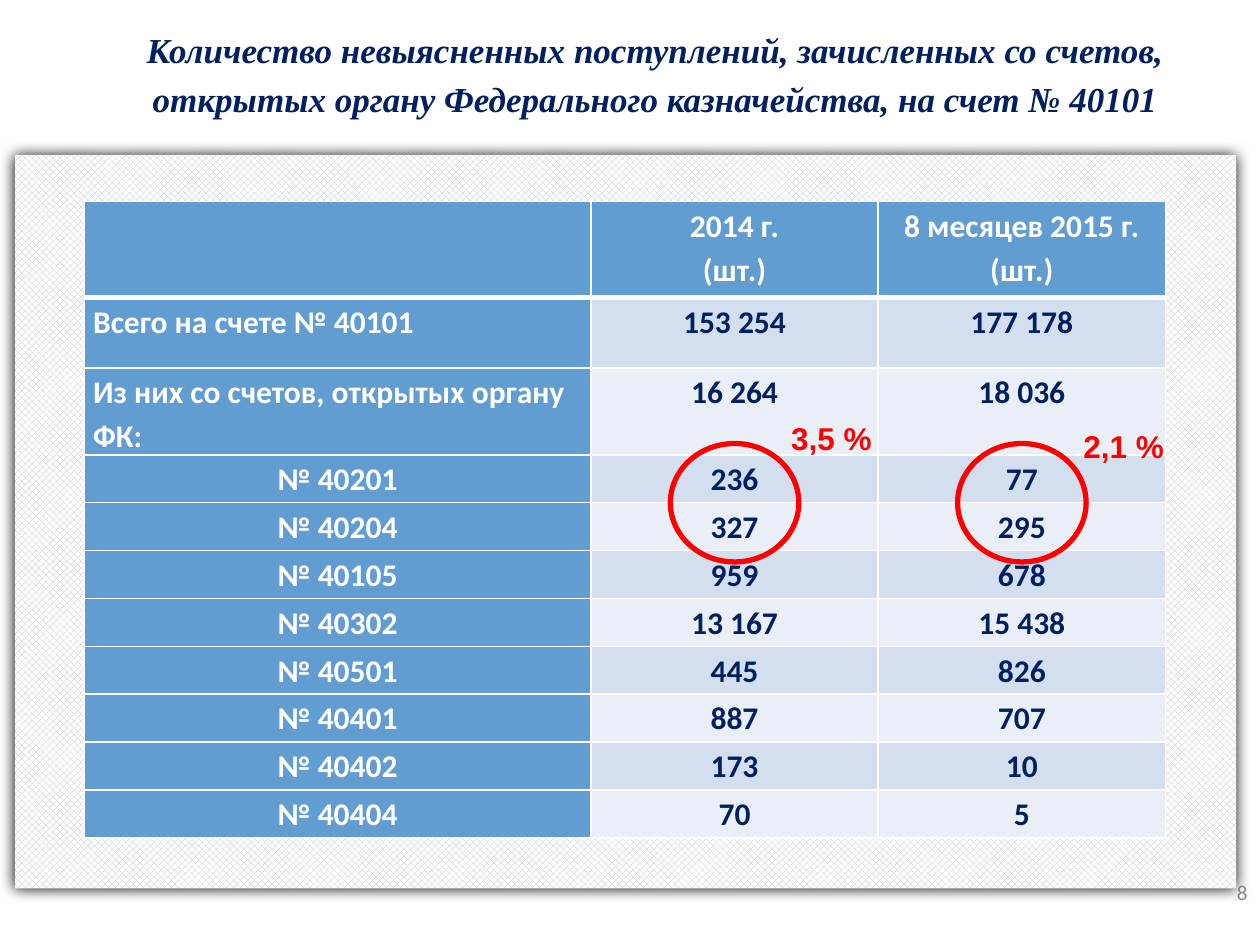
from dataclasses import dataclass
from itertools import accumulate

from lxml import etree
from pptx import Presentation
from pptx.dml.color import RGBColor
from pptx.enum.dml import MSO_PATTERN
from pptx.enum.shapes import MSO_SHAPE
from pptx.enum.text import MSO_ANCHOR, PP_ALIGN
from pptx.oxml.ns import qn
from pptx.util import Inches, Pt

LEFT, CENTER, RIGHT = PP_ALIGN.LEFT, PP_ALIGN.CENTER, PP_ALIGN.RIGHT
TOP, MIDDLE = MSO_ANCHOR.TOP, MSO_ANCHOR.MIDDLE
RECTANGLE, OVAL = MSO_SHAPE.RECTANGLE, MSO_SHAPE.OVAL
DIAMONDS = MSO_PATTERN.OUTLINED_DIAMOND


@dataclass(frozen=True)
class Theme:
    white: str = "FFFFFF"
    navy: str = "002060"
    blue: str = "629DD1"
    bands: tuple = ("D3DFEE", "EAEFF7")
    red: str = "FF0000"
    gray: str = "898989"
    pattern: str = "BFBFBF"
    shadow: str = "000000"
    title_font: str = "Times New Roman"
    table_font: str = "Calibri"
    mark_font: str = "Arial"
    title_size: int = 20
    body_size: int = 18
    number_size: int = 12
    line_spacing: float = 1.15


THEME = Theme()
TABLE_LEFT, TABLE_TOP = 0.67, 1.6
COLUMNS = [4.02, 2.28, 2.28]
ROWS = [0.76, 0.56, 0.69] + [0.38] * 8
COLUMN_EDGES = list(accumulate(COLUMNS, initial=TABLE_LEFT))
ROW_EDGES = list(accumulate(ROWS, initial=TABLE_TOP))

TITLE = ("Количество невыясненных поступлений, зачисленных со счетов, "
         "открытых органу Федерального казначейства, на счет № 40101")
RECEIPTS = [
    ("", "2014 г.\n(шт.)", "8 месяцев 2015 г.\n(шт.)"),
    ("Всего на счете № 40101", "153 254", "177 178"),
    ("Из них со счетов, открытых органу ФК:", "16 264", "18 036"),
    ("№ 40201", "236", "77"),
    ("№ 40204", "327", "295"),
    ("№ 40105", "959", "678"),
    ("№ 40302", "13 167", "15 438"),
    ("№ 40501", "445", "826"),
    ("№ 40401", "887", "707"),
    ("№ 40402", "173", "10"),
    ("№ 40404", "70", "5"),
]
FIRST_ACCOUNT_ROW = 3
# column, share, offset of the share from the column centre, top of the share
SHARES = [(1, "3,5 %", 0.35, 3.28), (2, "2,1 %", 0.39, 3.34)]


def rgb(value):
    return RGBColor.from_string(value)


def style_paragraph(paragraph, font_name, size, color, align, bold=False, italic=False):
    paragraph.alignment = align
    font = paragraph.font
    font.name, font.size, font.bold, font.italic = font_name, Pt(size), bold, italic
    font.color.rgb = rgb(color)


def add_text(slide, box, text, font_name, size, color, align=LEFT, anchor=TOP,
             bold=False, italic=False, spacing=1.0):
    frame = slide.shapes.add_textbox(*map(Inches, box)).text_frame
    frame.word_wrap = True
    frame.vertical_anchor = anchor
    frame.text = text
    paragraph = frame.paragraphs[0]
    paragraph.line_spacing = spacing
    style_paragraph(paragraph, font_name, size, color, align, bold, italic)


def add_panel(slide):
    """Patterned backdrop with a soft shadow just below it."""
    panel = slide.shapes.add_shape(RECTANGLE, *map(Inches, (0.12, 1.23, 9.69, 5.82)))
    panel.shadow.inherit = False
    panel.line.fill.background()
    panel.fill.patterned()
    panel.fill.pattern = DIAMONDS
    panel.fill.fore_color.rgb = rgb(THEME.pattern)
    panel.fill.back_color.rgb = rgb(THEME.white)
    effects = panel._element.spPr.find(qn("a:effectLst"))
    shadow = etree.SubElement(effects, qn("a:outerShdw"), blurRad=str(Pt(8.5)),
                              dist=str(Pt(1)), dir=str(90 * 60000),
                              algn="t", rotWithShape="0")
    etree.SubElement(shadow, qn("a:srgbClr"), val=THEME.shadow)


def set_borders(cell, widths):
    """Draw white borders; widths maps L, R, T, B, in that order, to points."""
    properties = cell._tc.get_or_add_tcPr()
    for position, (side, width) in enumerate(widths.items()):
        border = etree.Element(qn(f"a:ln{side}"), w=str(Pt(width)))
        fill = etree.SubElement(border, qn("a:solidFill"))
        etree.SubElement(fill, qn("a:srgbClr"), val=THEME.white)
        properties.insert(position, border)


def fill_cell(cell, text, row, column):
    is_heading = row == 0 or column == 0
    is_summary_label = column == 0 and row < FIRST_ACCOUNT_ROW
    cell.margin_left = cell.margin_right = Inches(0.07)
    cell.margin_top = cell.margin_bottom = 0
    cell.fill.solid()
    cell.fill.fore_color.rgb = rgb(THEME.blue if is_heading else THEME.bands[(row - 1) % 2])
    cell.text = text
    for paragraph in cell.text_frame.paragraphs:
        paragraph.line_spacing = THEME.line_spacing
        style_paragraph(paragraph, THEME.table_font, THEME.body_size,
                        THEME.white if is_heading else THEME.navy,
                        LEFT if is_summary_label else CENTER, bold=True)
    set_borders(cell, {"L": 1, "R": 1, "T": 3 if row == 1 else 1,
                       "B": 3 if row == 0 else 1})


def add_receipts_table(slide):
    box = (TABLE_LEFT, TABLE_TOP, sum(COLUMNS), sum(ROWS))
    table = slide.shapes.add_table(len(ROWS), len(COLUMNS), *map(Inches, box)).table
    for column, width in zip(table.columns, COLUMNS):
        column.width = Inches(width)
    for row, height in zip(table.rows, ROWS):
        row.height = Inches(height)
    for row, texts in enumerate(RECEIPTS):
        for column, text in enumerate(texts):
            fill_cell(table.cell(row, column), text, row, column)


def add_ring(slide, center_x, center_y, width=1.02, height=0.94):
    box = (center_x - width / 2, center_y - height / 2, width, height)
    ring = slide.shapes.add_shape(OVAL, *map(Inches, box))
    ring.shadow.inherit = False
    ring.fill.background()
    ring.line.color.rgb = rgb(THEME.red)
    ring.line.width = Pt(3)


def add_shares(slide):
    """Ring the first two accounts of each period and note their share."""
    ring_y = ROW_EDGES[FIRST_ACCOUNT_ROW + 1]
    for column, share, offset, top in SHARES:
        center_x = COLUMN_EDGES[column] + COLUMNS[column] / 2
        add_ring(slide, center_x, ring_y)
        add_text(slide, (center_x + offset, top, 1.02, 0.4), share,
                 THEME.mark_font, THEME.body_size, THEME.red, bold=True)


def main():
    presentation = Presentation()
    presentation.slide_width, presentation.slide_height = Inches(10), Inches(7.5)
    slide = presentation.slides.add_slide(presentation.slide_layouts[6])
    add_panel(slide)
    add_text(slide, (0.67, 0.13, 9.06, 0.88), TITLE, THEME.title_font, THEME.title_size,
             THEME.navy, CENTER, bold=True, italic=True, spacing=THEME.line_spacing)
    add_text(slide, (7.75, 6.88, 2.25, 0.4), "8", THEME.table_font, THEME.number_size,
             THEME.gray, RIGHT, MIDDLE)
    add_receipts_table(slide)
    add_shares(slide)
    presentation.save("out.pptx")


if __name__ == "__main__":
    main()
